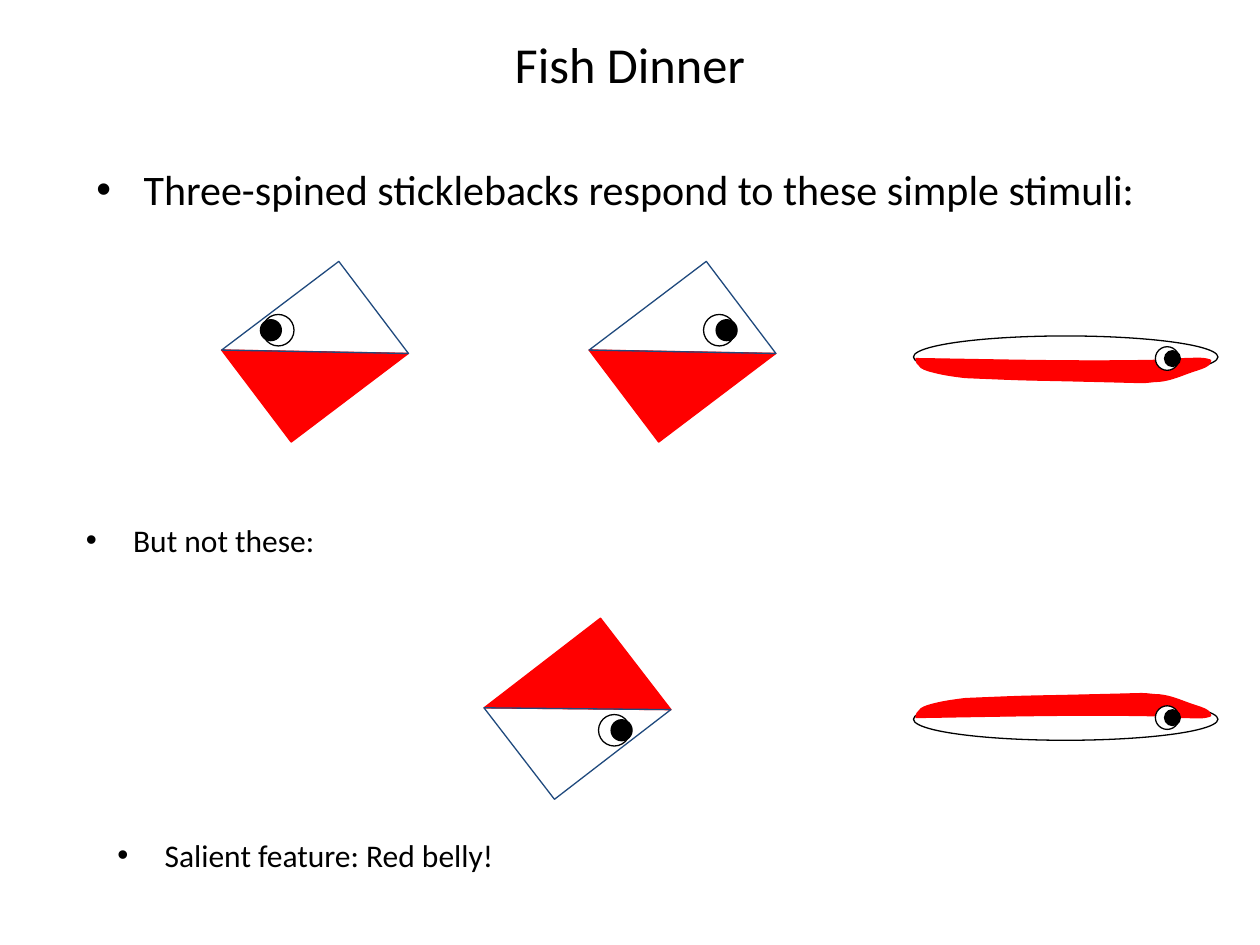
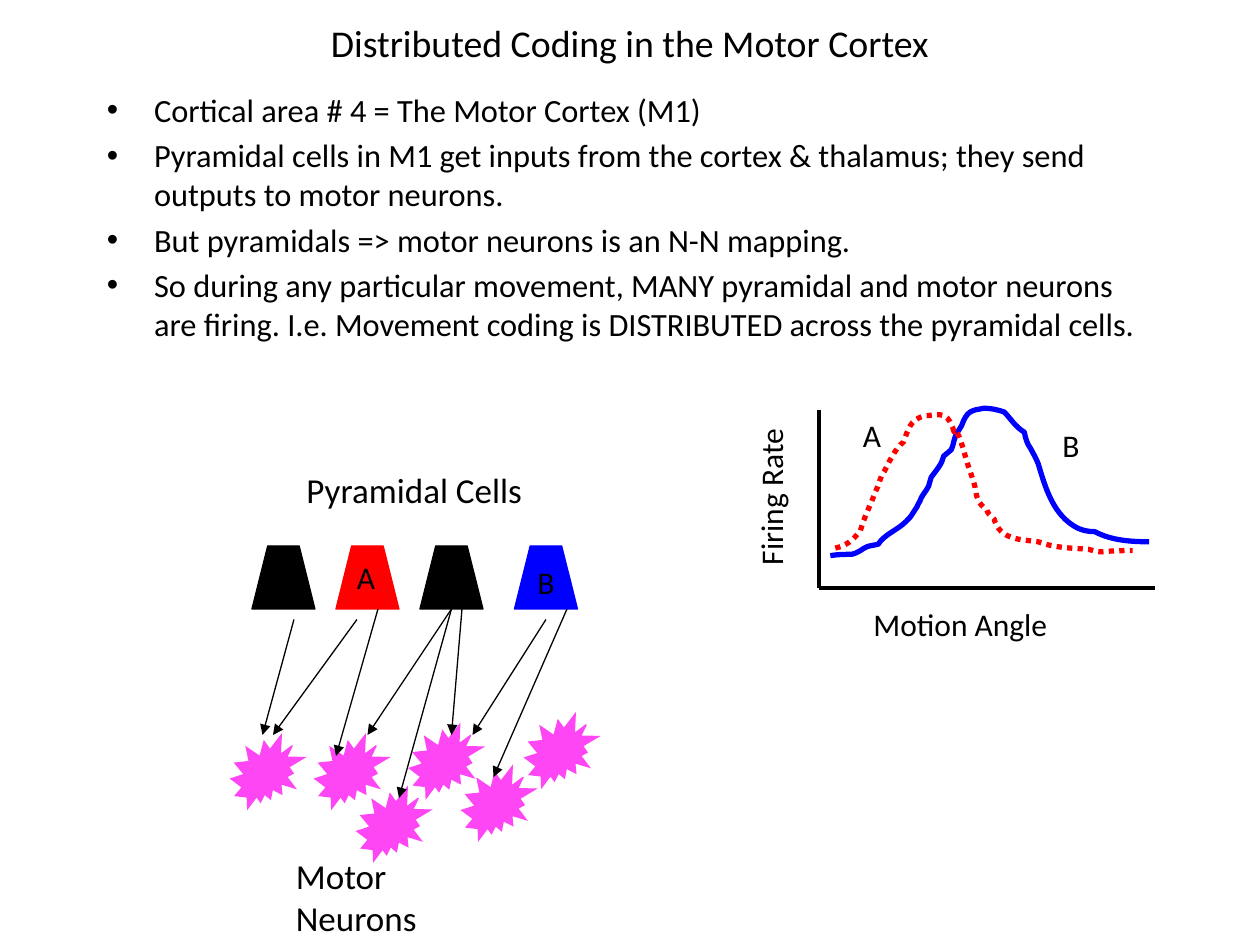
from lxml import etree
from pptx import Presentation
from pptx.dml.color import RGBColor
from pptx.enum.dml import MSO_LINE
from pptx.enum.shapes import MSO_CONNECTOR, MSO_SHAPE
from pptx.enum.text import MSO_ANCHOR, PP_ALIGN
from pptx.oxml.ns import qn
from pptx.util import Inches, Pt

WIDTH, HEIGHT = Inches(10), Inches(7.5)
COLS, ROWS = 120, 90
FINE = 1000 / COLS  # curve points lie on a finer grid of 1000 by 750
FONT = "Calibri"
COLORS = {
    "black": "000000", "white": "FFFFFF", "red": "FF0000",
    "blue": "0000FF", "navy": "1F497D", "pink": "FF46F5",
}

# Curves: a start point, then two control points and an end point per segment
BELLY = [
    (2, 18), (70, 19), (139, 21), (208, 19), (211, 18), (213, 18), (216, 18),
    (222, 18), (229, 17), (235, 19), (237, 19), (235, 22), (234, 23),
    (232, 25), (225, 27), (222, 28), (213, 31), (205, 35), (195, 36),
    (190, 36), (186, 37), (181, 37), (66, 34), (113, 36), (41, 33),
    (33, 32), (25, 31), (17, 29), (13, 28), (9, 27), (6, 25), (2, 20), (3, 23), (2, 18)]
RATE_A = [
    (13, 110), (22, 108), (27, 104), (33, 96), (36, 85), (41, 76), (45, 65),
    (48, 60), (48, 54), (52, 49), (55, 43), (61, 30), (67, 26),
    (71, 16), (72, 8), (84, 5), (90, 5), (97, 2), (102, 7),
    (104, 9), (106, 14), (106, 14), (109, 23), (105, 12), (110, 19),
    (113, 25), (115, 33), (117, 40), (119, 47), (122, 54), (124, 62),
    (125, 69), (126, 75), (133, 79), (134, 83), (136, 84), (139, 87),
    (144, 104), (160, 103), (174, 105), (187, 110), (201, 110), (214, 111),
    (228, 115), (217, 112), (249, 112)]
RATE_B = [
    (9, 116), (15, 115), (20, 115), (26, 115), (30, 114), (33, 112), (36, 110),
    (39, 108), (43, 108), (47, 107), (52, 99), (62, 96), (69, 89),
    (74, 84), (72, 86), (78, 77), (78, 76), (80, 73), (80, 73),
    (81, 69), (85, 65), (87, 61), (88, 59), (88, 56), (89, 54),
    (91, 51), (97, 44), (98, 40), (99, 39), (99, 38), (99, 37),
    (101, 35), (103, 34), (105, 32), (107, 28), (107, 22), (110, 18),
    (111, 16), (113, 14), (114, 11), (115, 8), (117, 4), (120, 2),
    (123, 0), (127, 0), (131, -1), (136, -1), (141, 0), (147, 2),
    (152, 7), (156, 14), (163, 18), (164, 23), (165, 27), (168, 31),
    (170, 35), (172, 38), (174, 43), (180, 63), (186, 84), (205, 94),
    (209, 96), (214, 97), (219, 97), (232, 104), (248, 105), (262, 105)]


def rgb(name):
    return RGBColor.from_string(COLORS[name])


def col(n):
    return round(n * WIDTH / COLS)


def row(n):
    return round(n * HEIGHT / ROWS)


def paint(sp, fill, line, width=0.75):
    sp.shadow.inherit = False
    if fill:
        sp.fill.solid()
        sp.fill.fore_color.rgb = rgb(fill)
    else:
        sp.fill.background()
    sp.line.color.rgb = rgb(line)
    sp.line.width = Pt(width)
    return sp


def add_preset(shapes, kind, x, y, w, h, fill, line, rotation=0):
    sp = shapes.add_shape(kind, col(x), row(y), col(w), row(h))
    sp.rotation = rotation
    return paint(sp, fill, line)


def add_outline(shapes, points, fill, line, width=0.75, close=False):
    pts = [(col(x), row(y)) for x, y in points]
    builder = shapes.build_freeform(*pts[0], scale=1.0)
    builder.add_line_segments(pts[1:], close=close)
    return paint(builder.convert_to_shape(), fill, line, width)


def add_curve(shapes, x, y, points, fill, line, width=0.75, up=1, close=False):
    """Outline whose points, three at a time, become Bézier segments."""
    sp = add_outline(shapes, [(x + dx / FINE, y + up * dy / FINE) for dx, dy in points],
                     fill, line, width, close)
    path = next(sp._element.iter(qn("a:path")))
    steps = path.findall(qn("a:lnTo"))
    for i in range(0, len(points) - 1, 3):
        bezier = etree.Element(qn("a:cubicBezTo"))
        steps[i].addprevious(bezier)
        for step in steps[i:i + 3]:
            bezier.append(step[0])
            path.remove(step)
    return sp


def add_line(shapes, x1, y1, x2, y2, width=0.75, arrow=False):
    cx = shapes.add_connector(MSO_CONNECTOR.STRAIGHT, col(x1), row(y1), col(x2), row(y2))
    cx.line.color.rgb = rgb("black")
    cx.line.width = Pt(width)
    if arrow:
        etree.SubElement(cx.line._get_or_add_ln(), qn("a:tailEnd"), type="triangle")
    etree.SubElement(cx._element.spPr, qn("a:effectLst"))


def add_text(shapes, box, lines, size, bullet=False, wrap=True, align=PP_ALIGN.LEFT,
             anchor=MSO_ANCHOR.TOP):
    x, y, w, h = box
    tb = shapes.add_textbox(col(x), row(y), col(w), row(h))
    tf = tb.text_frame
    tf.word_wrap = wrap
    tf.vertical_anchor = anchor
    for i, line in enumerate(lines):
        p = tf.paragraphs[0] if i == 0 else tf.add_paragraph()
        p.alignment = align
        if bullet:
            pPr = p._p.get_or_add_pPr()
            pPr.set("marL", str(col(4.5)))
            pPr.set("indent", str(-col(4.5)))
            before = etree.SubElement(pPr, qn("a:spcBef"))
            etree.SubElement(before, qn("a:spcPct"), val="20000")
            etree.SubElement(pPr, qn("a:buFont"), typeface="Arial")
            etree.SubElement(pPr, qn("a:buChar"), char="•")
        r = p.add_run()
        r.text = line
        r.font.name = FONT
        r.font.size = Pt(size)
        r.font.color.rgb = rgb("black")
    return tb


def add_title(shapes, text, y, h, size):
    add_text(shapes, (9, y, 102, h), [text], size, align=PP_ALIGN.CENTER,
             anchor=MSO_ANCHOR.MIDDLE)


def add_label(shapes, x, y, w, text, size=18):
    return add_text(shapes, (x, y, w, 4.8), [text], size, wrap=False)


def add_eye(shapes, cx, cy, size, pupil_dx):
    for x, d, fill in ((cx, size, "white"), (cx + pupil_dx, size * 2 / 3, "black")):
        add_preset(shapes, MSO_SHAPE.OVAL, x - d / 2, cy - d / 2, d, d, fill, "black")


def draw_diamond_fish(s, box, facing=1, up=1):
    """facing is 1 for right and -1 for left; up is -1 for belly on top."""
    x, y, w, h = box
    shapes = s.shapes.add_group_shape().shapes
    add_eye(shapes, x + w / 2 + 3.5 * facing, y + h / 2 - 2.05 * up, 3, 0.7 * facing)
    belly = 322.9 if up == 1 else 142.4
    for turn, fill, line in ((belly, "red", "red"), ((belly + 180) % 360, None, "navy")):
        add_preset(shapes, MSO_SHAPE.RIGHT_TRIANGLE, *box, fill, line, turn)


def draw_eel(s, box, up=1):
    x, y, w, h = box
    shapes = s.shapes.add_group_shape().shapes
    add_preset(shapes, MSO_SHAPE.OVAL, *box, None, "black")
    add_curve(shapes, x, y if up == 1 else y + h, BELLY, "red", "red", up=up, close=True)
    add_eye(shapes, x + w * 5 / 6, y + h / 2 + 0.15 * up, 2.25, 0.5)


def draw_tuning_chart(s, box):
    x, y, w, h = box
    add_line(s.shapes, x, y, x, y + h, 2.25)
    add_line(s.shapes, x + w, y + h, x, y + h, 2.25)
    add_label(s.shapes, x + 4, y + h + 1, 19.3, "Motion Angle")
    add_label(s.shapes, x - 12.6, y + 5.6, 16, "Firing Rate").rotation = 270
    add_curve(s.shapes, x, y, RATE_B, None, "blue", 3)
    add_curve(s.shapes, x, y, RATE_A, None, "red", 3).line.dash_style = MSO_LINE.ROUND_DOT
    add_label(s.shapes, x + 3, y, 4.5, "A")
    add_label(s.shapes, x + 22, y + 1, 4.5, "B")


def draw_neuron_map(s, box):
    x, y, w, h = box
    shapes = s.shapes.add_group_shape().shapes
    for dx, color in ((10, "red"), (27, "blue"), (18, "black"), (2, "black")):
        cell = [(x + dx + cx, y + cy) for cx, cy in ((0, 14), (1.5, 8), (4.5, 8), (6, 14))]
        add_outline(shapes, cell, color, color, close=True)
    add_label(shapes, x + 6, y, 23.8, "Pyramidal Cells", 20)
    add_label(shapes, x + 10.8, y + 8.6, 4.5, "A")
    add_label(shapes, x + 28, y + 9, 4.5, "B")
    for dx, dy in ((0, 26), (8, 26), (17, 25), (28, 24), (12, 31), (22, 29)):
        seal = add_preset(shapes, MSO_SHAPE.EXPLOSION2, x + dx, y + dy, 7, 7, "pink", "pink")
        etree.SubElement(seal.line._get_or_add_ln(), qn("a:miter"), lim="800000")
    for x1, y1, x2, y2 in ((12, 15, 4, 26), (14, 14, 10, 28), (21, 14, 13, 26),
                           (6, 15, 3, 26), (32, 14, 25, 30), (22, 14, 21, 26),
                           (30, 15, 23, 26), (21, 14, 16, 32)):
        add_line(shapes, x + x1, y + y1, x + x2, y + y2, arrow=True)
    motor = add_text(shapes, (x + 5, y + h - 5.2, 22.8, 5.2), ["Motor Neurons"], 20)
    motor.text_frame.margin_right = col(7)


def build_fish_slide(s):
    add_title(s.shapes, "Fish Dinner", 3, 6, 28.8)
    for x, y, text, size in (
            (8, 15, "Three-spined sticklebacks respond to these simple stimuli:", 24),
            (7, 49, "But not these:", 18),
            (10, 79, "Salient feature: Red belly!", 18)):
        add_text(s.shapes, (x, y, 102, 6), [text], size, bullet=True)
    draw_diamond_fish(s, (48, 62, 14, 11), up=-1)
    draw_diamond_fish(s, (23, 28, 14, 11), facing=-1)
    draw_diamond_fish(s, (58, 28, 14, 11))
    draw_eel(s, (87, 32, 29, 4))
    draw_eel(s, (87, 66.5, 29, 4), up=-1)


def build_cortex_slide(s):
    add_title(s.shapes, "Distributed Coding in the Motor Cortex", 2, 4, 21.6)
    add_text(s.shapes, (9, 8, 102, 28), [
        "Cortical area # 4 = The Motor Cortex (M1)",
        "Pyramidal cells in M1 get inputs from the cortex & thalamus; "
        "they send outputs to motor neurons.",
        "But pyramidals => motor neurons is an N-N mapping.",
        "So during any particular movement, MANY pyramidal and motor neurons are firing. "
        "I.e. Movement coding is DISTRIBUTED across the pyramidal cells.",
    ], 18.5, bullet=True)
    draw_tuning_chart(s, (78, 39, 32, 17))
    draw_neuron_map(s, (22, 44, 35, 42))


def main():
    prs = Presentation()
    prs.slide_width, prs.slide_height = WIDTH, HEIGHT
    for build in (build_fish_slide, build_cortex_slide):
        build(prs.slides.add_slide(prs.slide_layouts[6]))
    prs.save("out.pptx")


if __name__ == "__main__":
    main()
